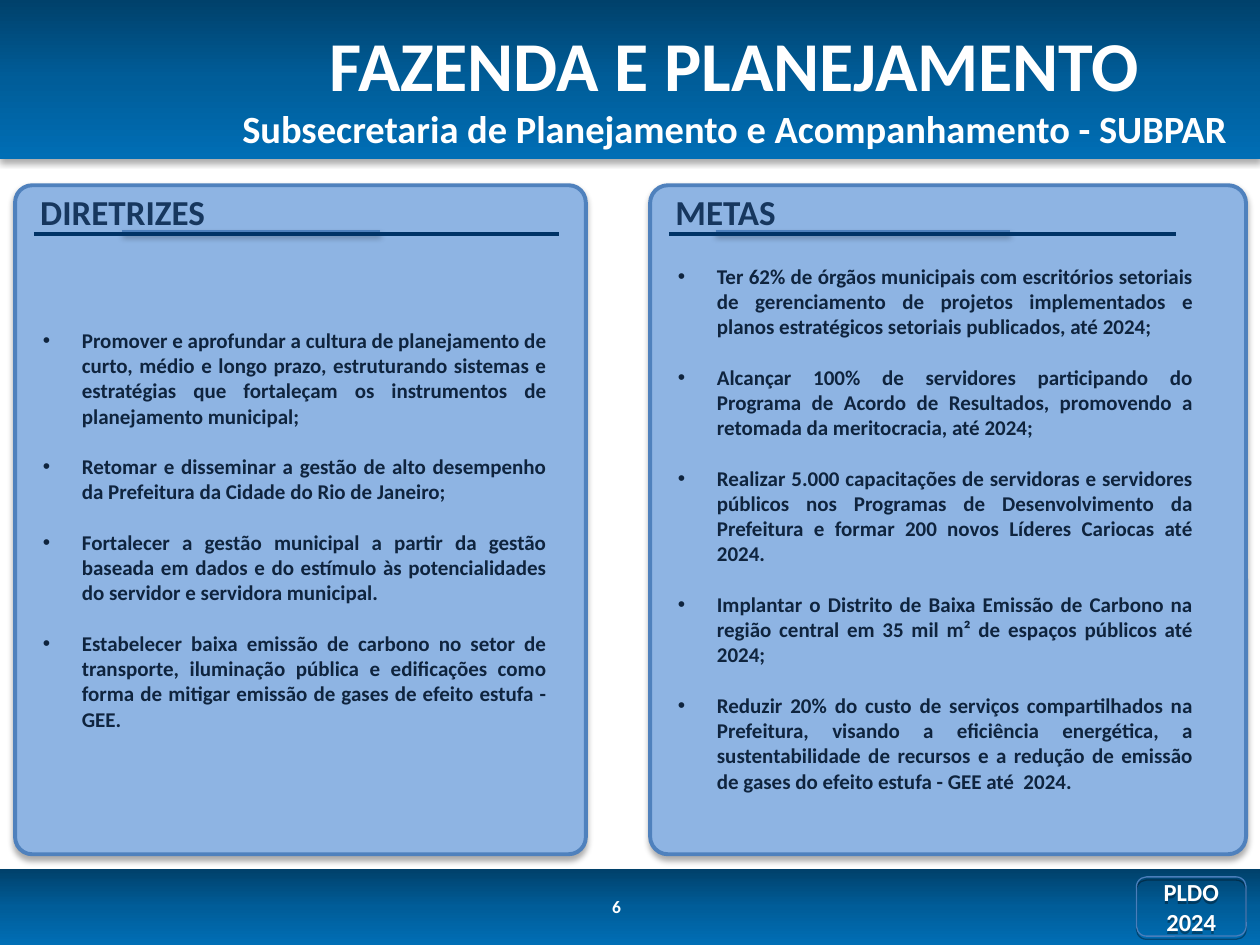
import copy

import pptx
import pptx.util
import pptx.dml.color
import pptx.enum.shapes
import pptx.enum.text
import pptx.oxml.ns
import pptx.oxml.xmlchemy
from lxml import etree

COLORS = {
    "band_top": "00416B", "band_middle": "005D99", "band_bottom": "006EB5",
    "panel": "8EB4E3", "panel_line": "4F81BD", "heading": "17375E",
    "body": "0F243E", "rule": "003366", "badge_line": "4A7EBB",
    "white": "FFFFFF", "shadow": "000000",
}
COLORS = {name: pptx.dml.color.RGBColor.from_string(value)
          for name, value in COLORS.items()}
qn = pptx.oxml.ns.qn
Pt = pptx.util.Pt
SHAPE = pptx.enum.shapes.MSO_SHAPE
ANCHOR = pptx.enum.text.MSO_ANCHOR
ALIGN = pptx.enum.text.PP_ALIGN

deck = pptx.Presentation()
deck.slide_width = pptx.util.Inches(10)
deck.slide_height = pptx.util.Inches(7.5)
page = deck.slides.add_slide(deck.slide_layouts.get_by_name("Two Content"))
shapes = page.shapes
UNIT = deck.slide_width // 100  # grid of 100 columns by 75 rows


def add_text(para, text, size, color):
    span = para.add_run()
    span.text = text
    span.font.name = "Calibri"
    span.font.size = Pt(size)
    span.font.bold = True
    span.font.color.rgb = COLORS[color]


def set_shadow(item, alpha=32, blur=3.5, distance=2.2):
    properties = item._element.spPr
    effects = properties.find(qn("a:effectLst"))
    if effects is None:
        effects = etree.SubElement(properties, qn("a:effectLst"))
    if alpha:
        shadow = etree.SubElement(
            effects, qn("a:outerShdw"), blurRad=str(Pt(blur)),
            dist=str(Pt(distance)), dir="5400000", rotWithShape="0")
        color = etree.SubElement(shadow, qn("a:srgbClr"), val=str(COLORS["shadow"]))
        etree.SubElement(color, qn("a:alpha"), val=str(alpha * 1000))


# Header and footer bands
for top, height in ((0, 12.6), (69, 6)):
    band = shapes.add_shape(SHAPE.RECTANGLE, 0, int(top * UNIT),
                            deck.slide_width, int(height * UNIT))
    band.shadow.inherit = False
    band.line.fill.background()
    band.fill.gradient()
    band.fill.gradient_angle = 270
    stop_list = band._element.spPr.find(".//" + qn("a:gsLst"))
    stop_list.append(copy.deepcopy(stop_list[-1]))
    for stop, position, name in zip(band.fill.gradient_stops, (0, 0.5, 1),
                                    ("band_top", "band_middle", "band_bottom")):
        stop.position = position
        stop.color.rgb = COLORS[name]
    set_shadow(band)

# Page number
number = shapes.add_textbox(*(int(n * UNIT) for n in (47.6, 70.6, 4.7, 2.4)))
number.text_frame.word_wrap = True
add_text(number.text_frame.paragraphs[0], "6", 10, "white")

# Badge in the footer
badge = shapes.add_shape(SHAPE.ROUNDED_RECTANGLE,
                         *(int(n * UNIT) for n in (90.2, 69.6, 8.7, 4.7)))
badge.shadow.inherit = False
badge.fill.background()
badge.line.color.rgb = COLORS["badge_line"]
badge.line.width = Pt(0.75)
set_shadow(badge, 35, 0, 1.8)
badge.text_frame.word_wrap = True
badge.text_frame.vertical_anchor = ANCHOR.MIDDLE
badge.text_frame.paragraphs[0].alignment = ALIGN.CENTER
add_text(badge.text_frame.paragraphs[0], "PLDO 2024", 14, "white")

# Panels: heading, left, width, accent line, rule, list place, list items
PANELS = (
    ("DIRETRIZES", 1.2, 45.3, (9.7, 30.2), (2.7, 44.4), (0.4, 25.5, 44, 35.8), (
        "Promover e aprofundar a cultura de planejamento de curto, médio e longo prazo, "
        "estruturando sistemas e estratégias que fortaleçam os instrumentos de "
        "planejamento municipal;",
        "Retomar e disseminar a gestão de alto desempenho da Prefeitura da Cidade do "
        "Rio de Janeiro;",
        "Fortalecer a gestão municipal a partir da gestão baseada em dados e do estímulo "
        "às potencialidades do servidor e servidora municipal.",
        "Estabelecer baixa emissão de carbono no setor de transporte, iluminação pública "
        "e edificações como forma de mitigar emissão de gases de efeito estufa - GEE.",
    )),
    ("METAS", 51.6, 47.3, (56.8, 80.2), (53.1, 93.3), (50.8, 20.4, 44.9, 45.4), (
        "Ter 62% de órgãos municipais com escritórios setoriais de gerenciamento de "
        "projetos implementados e planos estratégicos setoriais publicados, até 2024;",
        "Alcançar 100% de servidores participando do Programa de Acordo de Resultados, "
        "promovendo a retomada da meritocracia, até 2024;",
        "Realizar 5.000 capacitações de servidoras e servidores públicos nos Programas "
        "de Desenvolvimento da Prefeitura e formar 200 novos Líderes Cariocas até 2024.",
        "Implantar o Distrito de Baixa Emissão de Carbono na região central em 35 mil m² "
        "de espaços públicos até 2024;",
        "Reduzir 20% do custo de serviços compartilhados na Prefeitura, visando a "
        "eficiência energética, a sustentabilidade de recursos e a redução de emissão "
        "de gases do efeito estufa - GEE até  2024.",
    )),
)
for index, (heading, left, width, accent, rule, place, items) in enumerate(PANELS, 1):
    panel = shapes.add_shape(SHAPE.ROUNDED_RECTANGLE,
                             *(int(n * UNIT) for n in (left, 14.7, width, 53.1)))
    panel.adjustments[0] = 0.03
    panel.shadow.inherit = False
    panel.fill.solid()
    panel.fill.fore_color.rgb = COLORS["panel"]
    panel.line.color.rgb = COLORS["panel_line"]
    panel.line.width = Pt(2.25)
    set_shadow(panel)
    frame = panel.text_frame
    frame.margin_left = frame.margin_right = frame.margin_top = frame.margin_bottom = 0
    frame.vertical_anchor = ANCHOR.TOP
    para = frame.paragraphs[0]
    para.alignment = ALIGN.LEFT
    indent = str(int(0.8 * UNIT))
    para._p.get_or_add_pPr().set("marL", indent)
    para._p.get_or_add_pPr().set("indent", indent)
    add_text(para, heading, 20, "heading")

    # Accent line with a shadow, then the rule over it
    for (start, end), row, color, alpha in ((accent, 18.4, "panel_line", 32),
                                            (rule, 18.6, "rule", 0)):
        line = shapes.add_connector(
            pptx.enum.shapes.MSO_CONNECTOR.STRAIGHT,
            *(int(n * UNIT) for n in (start, row, end, row)))
        line.line.color.rgb = COLORS[color]
        line.line.width = Pt(2.25)
        set_shadow(line, alpha)

    # Bulleted list
    box = page.placeholders[index]
    box.left, box.top, box.width, box.height = (int(n * UNIT) for n in place)
    shapes._spTree.append(box._element)
    frame = box.text_frame
    frame.word_wrap = True
    frame.auto_size = pptx.enum.text.MSO_AUTO_SIZE.NONE
    frame.vertical_anchor = ANCHOR.TOP
    for order, item in enumerate(items):
        para = frame.add_paragraph() if order else frame.paragraphs[0]
        properties = para._p.get_or_add_pPr()
        properties.set("marL", str(int(5.1 * UNIT)))
        properties.set("indent", str(int(-3.1 * UNIT)))
        etree.SubElement(properties, qn("a:buFont"), typeface="Arial")
        etree.SubElement(properties, qn("a:buChar"), char="•")
        para.alignment = ALIGN.JUSTIFY
        para.line_spacing = 1.0
        para.space_before = Pt(14.5 if order else 0)
        add_text(para, item, 12, "body")

# Title
title = shapes.title
title.left, title.top, title.width, title.height = (
    int(n * UNIT) for n in (16.6, 1.4, 83.4, 10.9))
shapes._spTree.append(title._element)
title.text_frame.word_wrap = True
title.text_frame.auto_size = pptx.enum.text.MSO_AUTO_SIZE.NONE
title.text_frame.vertical_anchor = ANCHOR.MIDDLE
para = title.text_frame.paragraphs[0]
para.alignment = ALIGN.CENTER
add_text(para, "FAZENDA E PLANEJAMENTO", 40, "white")
para.add_line_break()
add_text(para, "Subsecretaria de Planejamento e Acompanhamento - SUBPAR", 22, "white")

deck.save("out.pptx")
